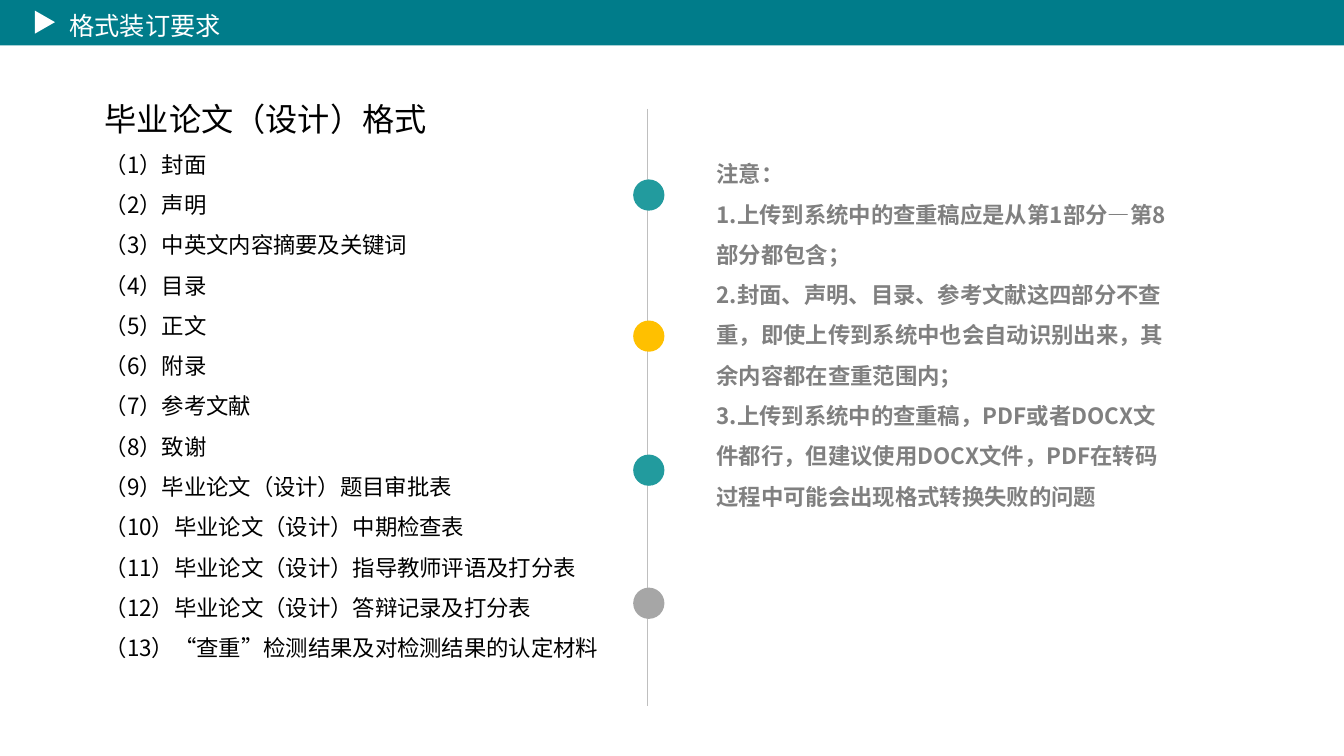
from lxml import etree
from pptx import Presentation
from pptx.dml.color import RGBColor
from pptx.enum.shapes import MSO_CONNECTOR, MSO_SHAPE
from pptx.oxml.ns import qn
from pptx.util import Inches, Pt

RECTANGLE = MSO_SHAPE.RECTANGLE
TRIANGLE = MSO_SHAPE.ISOSCELES_TRIANGLE
OVAL = MSO_SHAPE.OVAL
STRAIGHT = MSO_CONNECTOR.STRAIGHT

WHITE = RGBColor(0xFF, 0xFF, 0xFF)
BLACK = RGBColor(0x00, 0x00, 0x00)
BANNER_TEAL = RGBColor(0x00, 0x7C, 0x8A)
DOT_TEAL = RGBColor(0x22, 0x9B, 0x9E)
AMBER = RGBColor(0xFF, 0xC0, 0x00)
DOT_GRAY = RGBColor(0xA6, 0xA6, 0xA6)
LINE_GRAY = RGBColor(0xBF, 0xBF, 0xBF)
NOTE_GRAY = RGBColor(0x80, 0x80, 0x80)

FORMAT_PARTS = [
    "封面",
    "声明",
    "中英文内容摘要及关键词",
    "目录",
    "正文",
    "附录",
    "参考文献",
    "致谢",
    "毕业论文（设计）题目审批表",
    "毕业论文（设计）中期检查表",
    "毕业论文（设计）指导教师评语及打分表",
    "毕业论文（设计）答辩记录及打分表",
    "“查重”检测结果及对检测结果的认定材料",
]
NOTES = [
    "注意：",
    "1.上传到系统中的查重稿应是从第1部分—第8部分都包含；",
    "2.封面、声明、目录、参考文献这四部分不查重，即使上传到系统中也会自动识别出来，其余内容都在查重范围内；",
    "3.上传到系统中的查重稿，PDF或者DOCX文件都行，但建议使用DOCX文件，PDF在转码过程中可能会出现格式转换失败的问题",
]
TIMELINE_DOTS = [(1.78, DOT_TEAL), (3.18, AMBER), (4.51, DOT_TEAL), (5.83, DOT_GRAY)]


class SlideBuilder:
    font_name = "Noto Sans CJK SC"
    line_spacing = 1.5

    def __init__(self, slide):
        self.slide = slide

    def shape(self, kind, left, top, width, height, color, rotation=0):
        shape = self.slide.shapes.add_shape(
            kind, Inches(left), Inches(top), Inches(width), Inches(height))
        shape.shadow.inherit = False
        shape.fill.solid()
        shape.fill.fore_color.rgb = color
        shape.line.fill.background()
        shape.rotation = rotation

    def line(self, start_x, start_y, end_x, end_y, color, width):
        connector = self.slide.shapes.add_connector(
            STRAIGHT, Inches(start_x), Inches(start_y), Inches(end_x), Inches(end_y))
        connector.line.color.rgb = color
        connector.line.width = Pt(width)
        etree.SubElement(connector._element.spPr, qn("a:effectLst"))

    def text(self, left, top, width, height, lines, color, bold=False):
        box = self.slide.shapes.add_textbox(
            Inches(left), Inches(top), Inches(width), Inches(height))
        frame = box.text_frame
        frame.word_wrap = True
        for index, (content, size) in enumerate(lines):
            paragraph = frame.add_paragraph() if index else frame.paragraphs[0]
            paragraph.line_spacing = self.line_spacing
            run = paragraph.add_run()
            run.text = content
            run.font.size = Pt(size)
            run.font.bold = bold
            run.font.color.rgb = color
            run.font.name = self.font_name
            east_asian = etree.SubElement(run._r.get_or_add_rPr(), qn("a:ea"))
            east_asian.set("typeface", self.font_name)


def main():
    presentation = Presentation()
    presentation.slide_width = Inches(13.33)
    presentation.slide_height = Inches(7.5)
    builder = SlideBuilder(presentation.slides.add_slide(presentation.slide_layouts[6]))

    builder.shape(RECTANGLE, 0, 0, 13.33, 0.45, BANNER_TEAL)
    builder.text(0.59, -0.1, 1.94, 0.55, [("格式装订要求", 18)], WHITE)
    builder.shape(TRIANGLE, 0.33, 0.12, 0.23, 0.2, WHITE, rotation=90)

    format_lines = [("毕业论文（设计）格式", 23)]
    format_lines += [(f"（{number}）{part}", 16)
                     for number, part in enumerate(FORMAT_PARTS, start=1)]
    builder.text(0.94, 0.74, 5.56, 5.93, format_lines, BLACK)
    builder.text(7.01, 1.41, 4.74, 4.14, [(note, 16) for note in NOTES], NOTE_GRAY, bold=True)

    builder.line(6.42, 1.08, 6.42, 7, LINE_GRAY, 0.75)
    for top, color in TIMELINE_DOTS:
        builder.shape(OVAL, 6.28, top, 0.31, 0.31, color)

    presentation.save("out.pptx")


if __name__ == "__main__":
    main()
